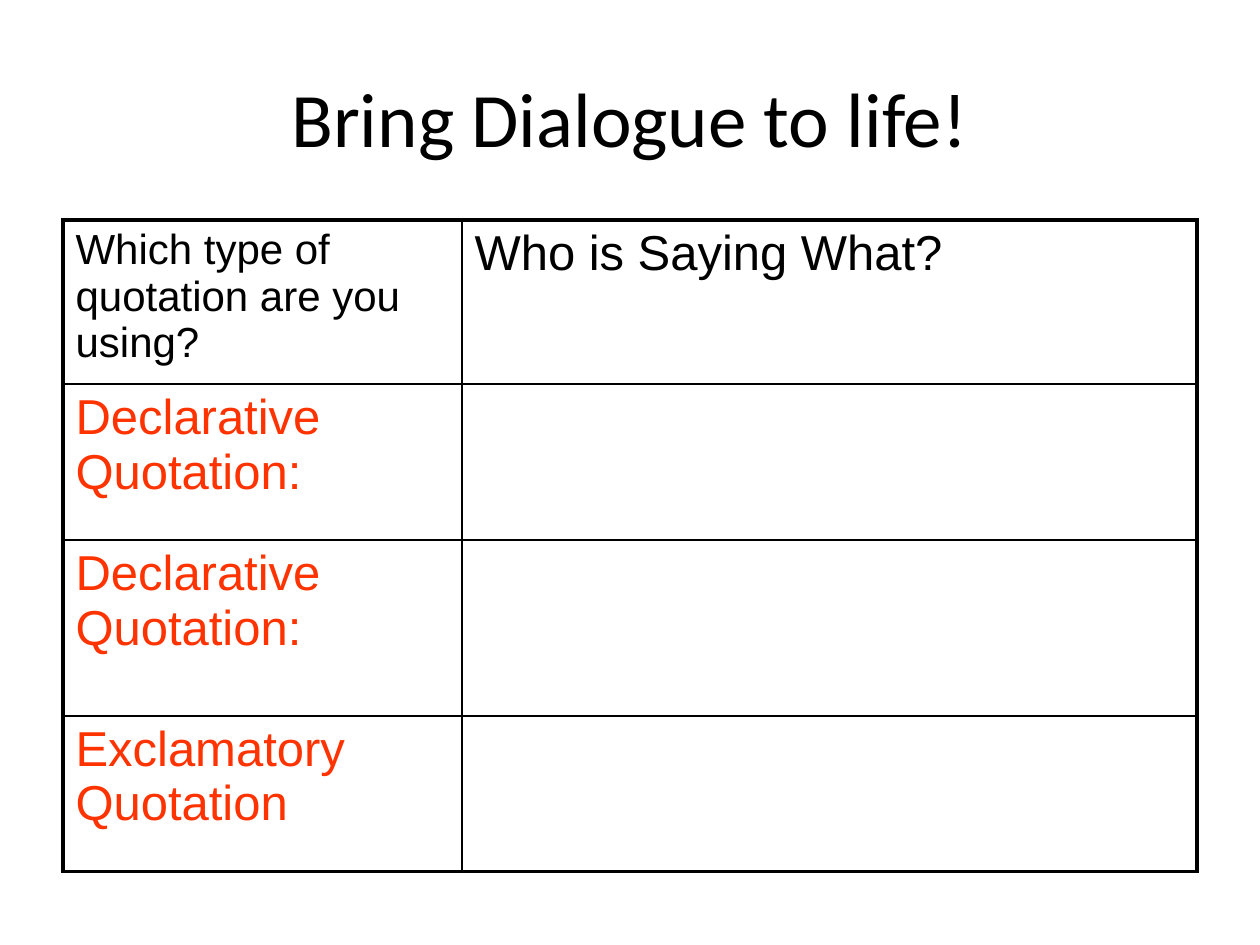
import pptx
import pptx.util
import pptx.dml.color
import pptx.enum.text
import pptx.oxml
import pptx.oxml.ns
from lxml import etree

TITLE = "Bring Dialogue to life!"
ROWS = [
    ("Which type of quotation are you using?", "Who is Saying What?"),
    ("Declarative Quotation:", ""),
    ("Declarative Quotation:", ""),
    ("Exclamatory Quotation", ""),
]
TITLE_BOX = (63, 38, 1134, 157)
TABLE_AT = (63, 220)
COL_WIDTHS = (399, 735)
ROW_HEIGHTS = (156, 156, 176, 156)

THEME = {
    "ink": "000000", "accent": "FF3300", "paper": "FFFFFF",
    "title_font": "Calibri", "body_font": "Arial",
    "title": 44, "question": 24, "body": 28,
    "outer": 2.25, "inner": 1,
}


def px(n):
    return pptx.util.Emu(n * 914400 // 126)


def rgb(name):
    return pptx.dml.color.RGBColor.from_string(THEME[name])


def style(p, font, size, color):
    for r in p.runs:
        r.font.name = THEME[font]
        r.font.size = pptx.util.Pt(THEME[size])
        r.font.color.rgb = rgb(color)


def set_borders(cell, weights):
    """Draw the left, right, top and bottom edges, before the cell's fill."""
    tcPr = cell._tc.get_or_add_tcPr()
    for i, (side, weight) in enumerate(zip("LRTB", weights)):
        ln = etree.Element(pptx.oxml.ns.qn("a:ln" + side),
                           w=str(pptx.util.Pt(THEME[weight])))
        fill = etree.SubElement(ln, pptx.oxml.ns.qn("a:solidFill"))
        etree.SubElement(fill, pptx.oxml.ns.qn("a:srgbClr"), val=THEME["ink"])
        tcPr.insert(i, ln)


def add_title(s):
    sp = s.shapes.add_textbox(*map(px, TITLE_BOX))
    tf = sp.text_frame
    tf.word_wrap = True
    tf.vertical_anchor = pptx.enum.text.MSO_ANCHOR.MIDDLE
    tf.text = TITLE
    p = tf.paragraphs[0]
    p.alignment = pptx.enum.text.PP_ALIGN.CENTER
    style(p, "title_font", "title", "ink")


def add_quotation_table(s):
    last_row, last_col = len(ROWS) - 1, len(COL_WIDTHS) - 1
    table = s.shapes.add_table(
        len(ROWS), len(COL_WIDTHS), *map(px, TABLE_AT),
        px(sum(COL_WIDTHS)), px(sum(ROW_HEIGHTS))).table
    table.first_row = table.horz_banding = False
    for column, width in zip(table.columns, COL_WIDTHS):
        column.width = px(width)
    for i, (row, height) in enumerate(zip(table.rows, ROW_HEIGHTS)):
        row.height = px(height)
        for j, cell in enumerate(row.cells):
            cell.fill.background()
            edges = (j == 0, j == last_col, i == 0, i == last_row)
            set_borders(cell, ["outer" if e else "inner" for e in edges])
            cell.text_frame.text = ROWS[i][j]
            style(cell.text_frame.paragraphs[0], "body_font",
                  "question" if i == j == 0 else "body",
                  "accent" if i else "ink")


def main():
    prs = pptx.Presentation()
    prs.slide_width, prs.slide_height = px(1260), px(945)
    s = prs.slides.add_slide(prs.slide_layouts[6])
    s.background.fill.solid()
    s.background.fill.fore_color.rgb = rgb("paper")
    add_title(s)
    add_quotation_table(s)
    prs.save("out.pptx")


if __name__ == "__main__":
    main()
